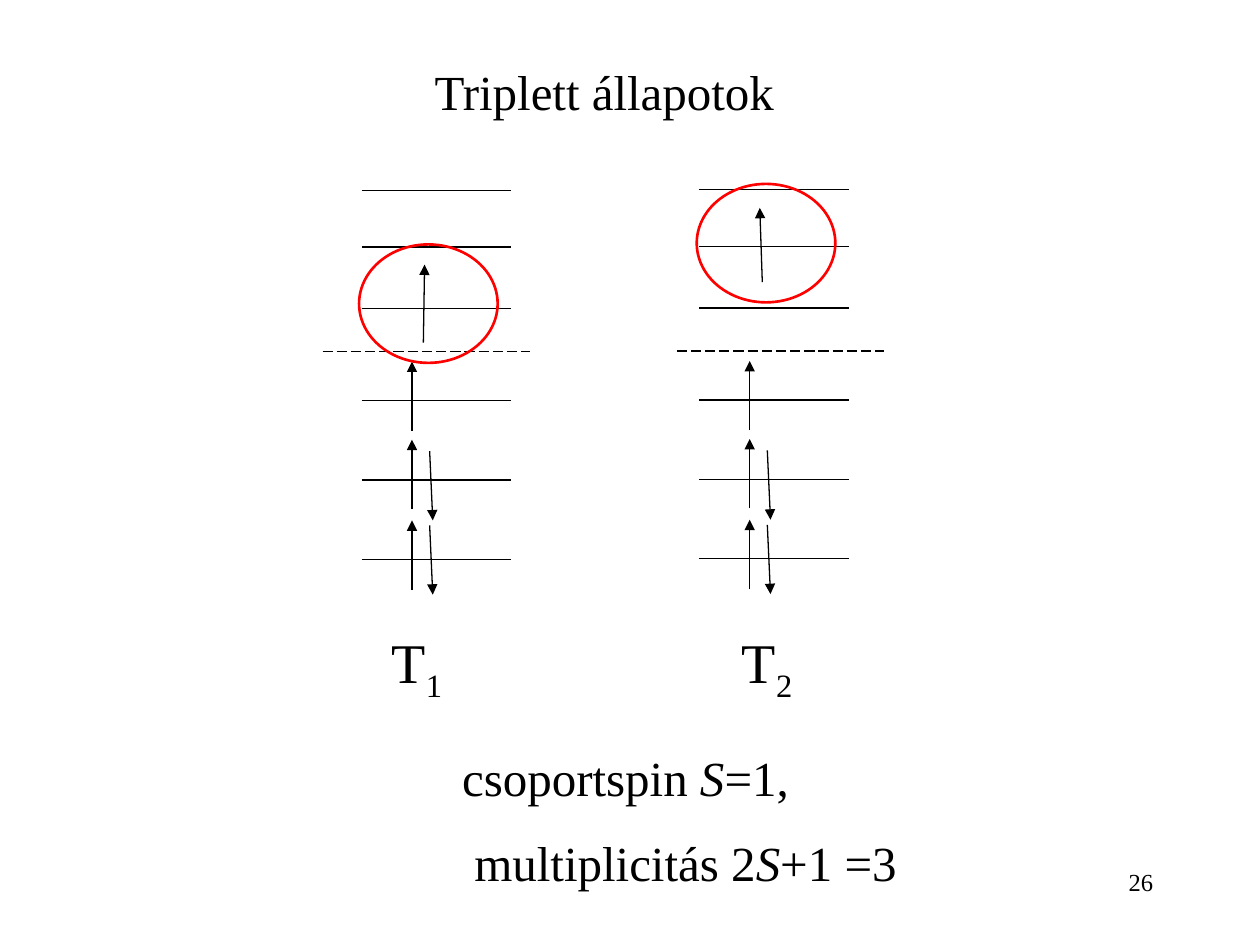
from lxml import etree
from pptx import Presentation
from pptx.dml.color import RGBColor
from pptx.enum.dml import MSO_LINE
from pptx.enum.shapes import MSO_CONNECTOR, MSO_SHAPE
from pptx.enum.text import MSO_ANCHOR, MSO_AUTO_SIZE, PP_ALIGN
from pptx.oxml.ns import qn
from pptx.util import Inches, Pt

STRAIGHT, OVAL = MSO_CONNECTOR.STRAIGHT, MSO_SHAPE.OVAL
LONG_DASH = MSO_LINE.LONG_DASH
LEFT, RIGHT = PP_ALIGN.LEFT, PP_ALIGN.RIGHT
TITLE_ONLY = 5
FONT, BLACK, RED = "Times New Roman", "000000", "FF0000"

# Text: box (left, top, width, height), size, alignment, paragraphs of (text, format)
ITALIC, SUBSCRIPT = {"italic": True}, {"subscript": True}
TITLE = ((3.35, 0.44, 3.7, 0.57), 28, LEFT, [[("Triplett állapotok", {})]])
TEXTS = [
    ((3.01, 4.93, 0.71, 0.63), 32, LEFT, [[("T", {}), ("1", SUBSCRIPT)]]),
    ((5.79, 4.93, 0.71, 0.63), 32, LEFT, [[("T", {}), ("2", SUBSCRIPT)]]),
    ((3.57, 5.88, 4.04, 1.28), 28, LEFT, [
        [("csoportspin", {}), (" S", ITALIC), ("=1,", {})],
        [(" multiplicitás 2", {}), ("S", ITALIC), ("+1 =3", {})],
    ]),
    ((7.17, 6.83, 2.08, 0.5), 14, RIGHT, [[("26", {})]]),
]

# Energy diagrams; heights below are shared, x is measured from the left of the levels
LEVELS = [4.44, 3.81, 3.18, 2.45, 1.96, 1.51]
LEVEL_WIDTH = 1.185
SPIN_LENGTH = 0.55
UP_X, UP_TAILS = 0.4, [4.68, 4.04, 3.42]
DOWN_X, DOWN_TAILS, DOWN_DRIFT = 0.54, [4.17, 3.58], 0.025
FERMI_Y, FERMI_WIDTH = 2.79, 1.65
RING_WIDTH, RING_HEIGHT = 1.1, 0.94
DIAGRAMS = [
    {"left": 2.87, "rise": 0, "fermi": 2.56, "ring": (2.85, 1.94),
     "excited": (3.36, 2.72, 3.37, 2.1)},
    {"left": 5.55, "rise": 0.005, "fermi": 5.37, "ring": (5.53, 1.46),
     "excited": (6.05, 2.24, 6.03, 1.65)},
]


def color(value):
    return RGBColor.from_string(value)


def write(box, place, size, align, paragraphs):
    box.left, box.top, box.width, box.height = map(Inches, place)
    frame = box.text_frame
    settings = {"word_wrap": True, "auto_size": MSO_AUTO_SIZE.NONE,
                "vertical_anchor": MSO_ANCHOR.TOP}
    for name, value in settings.items():
        setattr(frame, name, value)
    for index, spans in enumerate(paragraphs):
        para = frame.add_paragraph() if index else frame.paragraphs[0]
        para.alignment = align
        para.line_spacing = 1
        para.space_before = Pt(15 if index else 0)
        for text, style in spans:
            span = para.add_run()
            span.text = text
            span.font.name, span.font.size = FONT, Pt(size)
            span.font.color.rgb = color(BLACK)
            span.font.italic = style.get("italic", False)
            if style.get("subscript"):
                span.font._element.set("baseline", "-25000")


def draw_line(page, x1, y1, x2, y2, arrow=False, dash=None):
    line = page.shapes.add_connector(STRAIGHT, *map(Inches, (x1, y1, x2, y2)))
    line.line.color.rgb, line.line.width = color(BLACK), Pt(0.75)
    if dash:
        line.line.dash_style = dash
    if arrow:
        etree.SubElement(line.line._get_or_add_ln(), qn("a:tailEnd"), type="triangle")
    etree.SubElement(line._element.spPr, qn("a:effectLst"))


def draw_diagram(page, left, rise, fermi, ring, excited):
    for y in LEVELS:
        draw_line(page, left, y - rise, left + LEVEL_WIDTH, y - rise)
    for y in UP_TAILS:
        x = left + UP_X
        draw_line(page, x, y - rise, x, y - rise - SPIN_LENGTH, arrow=True)
    for y in DOWN_TAILS:
        x = left + DOWN_X
        draw_line(page, x, y - rise, x + DOWN_DRIFT, y - rise + SPIN_LENGTH, arrow=True)
    draw_line(page, *excited, arrow=True)
    draw_line(page, fermi, FERMI_Y - rise, fermi + FERMI_WIDTH, FERMI_Y - rise,
              dash=LONG_DASH)
    oval = page.shapes.add_shape(OVAL, *map(Inches, (*ring, RING_WIDTH, RING_HEIGHT)))
    oval.shadow.inherit = False
    oval.fill.background()
    oval.line.color.rgb, oval.line.width = color(RED), Pt(1.5)


def main():
    deck = Presentation()
    deck.slide_width, deck.slide_height = Inches(10), Inches(7.5)
    page = deck.slides.add_slide(deck.slide_layouts[TITLE_ONLY])
    write(page.shapes.title, *TITLE)
    for diagram in DIAGRAMS:
        draw_diagram(page, **diagram)
    for place, *content in TEXTS:
        write(page.shapes.add_textbox(*map(Inches, place)), place, *content)
    deck.save("out.pptx")


if __name__ == "__main__":
    main()
